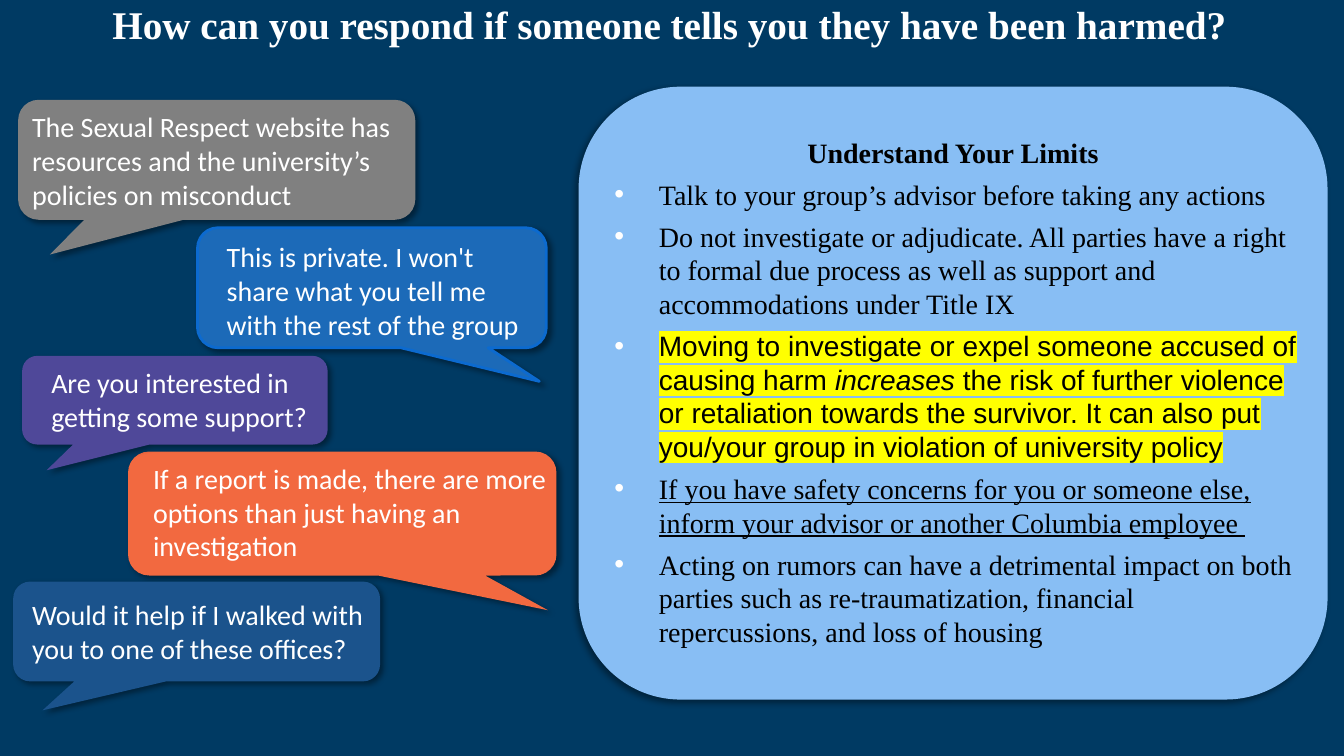
from lxml.etree import SubElement
from pptx import Presentation
from pptx.dml.color import RGBColor
from pptx.enum.shapes import MSO_SHAPE
from pptx.enum.text import MSO_ANCHOR, PP_ALIGN
from pptx.oxml.ns import qn
from pptx.util import Inches, Pt

COLORS = {
    "background": "003A63", "panel": "88BEF4", "white": "FFFFFF",
    "black": "000000", "highlight": "FFFF00", "orange": "F26940",
    "gray": "808080", "blue": "1C6AB8", "blue_edge": "0C6ACF",
    "navy": "1B538C", "purple": "4F4899",
}
SERIF = "Times New Roman"
WIDTH, HEIGHT = Inches(13.333), Inches(7.5)
TAIL_LEFT, TAIL_RIGHT = (-0.42, 0.79, 0.17), (0.48, 0.78, 0.17)

# Bubble box and text box are percentages of the slide: left, top, width, height
BUBBLES = [
    ("orange", TAIL_RIGHT, (9.53, 59.73, 31.88, 16.4), (10.65, 60.4, 31.2, 14.8),
     "If a report is made, there are more options than just having an investigation"),
    ("gray", TAIL_LEFT, (1.35, 13.2, 29.55, 15.87), (1.65, 13.87, 30.68, 14.8),
     "The Sexual Respect website has resources and the university’s policies on misconduct"),
    ("blue", TAIL_RIGHT, (14.7, 30.13, 25.95, 15.87), (16.13, 31.07, 24.45, 15.07),
     "This is private. I won't share what you tell me with the rest of the group"),
    ("navy", TAIL_LEFT, (0.98, 76.93, 27.3, 13.2), (1.65, 78.4, 27.38, 10.27),
     "Would it help if I walked with you to one of these offices?"),
    ("purple", TAIL_LEFT, (1.65, 47.07, 22.73, 11.73), (3.08, 47.73, 21, 10.27),
     "Are you interested in getting some support?"),
]

# Each bullet is a list of runs: text and its formatting
MARKED = {"font": "Arial", "highlight": "highlight"}
LIMITS = [
    [("Talk to your group’s advisor before taking any actions", {})],
    [("Do not investigate or adjudicate. All parties have a right to formal due process "
      "as well as support and accommodations under Title IX", {})],
    [("Moving to investigate or expel someone accused of causing harm ", MARKED),
     ("increases ", {**MARKED, "italic": True}),
     ("the risk of further violence or retaliation towards the survivor. It can also put "
      "you/your group in violation of university policy", MARKED)],
    [("If you have safety concerns for you or someone else, inform your advisor or another "
      "Columbia employee ", {"underline": True})],
    [("Acting on rumors can have a detrimental impact on both parties such as "
      "re-traumatization, financial repercussions, and loss of housing", {})],
]


def rgb(name):
    return RGBColor.from_string(COLORS[name])


def place(box):
    left, top, width, height = box
    return [int(share * length / 100) for share, length in
            ((left, WIDTH), (top, HEIGHT), (width, WIDTH), (height, HEIGHT))]


def add_color(parent, tag, name):
    holder = SubElement(parent, qn(tag))
    return SubElement(holder, qn("a:srgbClr"), val=COLORS[name])


def add_run(paragraph, text, color, font=SERIF, size=20, highlight=None, **styles):
    run = paragraph.add_run()
    run.text = text
    run.font.size = Pt(size)
    run.font.color.rgb = rgb(color)
    if highlight:
        properties = run.font._element
        add_color(properties, "a:highlight", highlight)
    run.font.name = font
    for style, value in styles.items():
        setattr(run.font, style, value)


def add_shadow(shape, degrees):
    shape.shadow.inherit = False
    effects = shape._element.spPr.find(qn("a:effectLst"))
    shadow = SubElement(effects, qn("a:outerShdw"), blurRad=str(Pt(4)), dist=str(Pt(3)),
                        dir=str(degrees * 60000), algn="tl", rotWithShape="0")
    color = SubElement(shadow, qn("a:srgbClr"), val=COLORS["black"])
    SubElement(color, qn("a:alpha"), val="40000")


def add_block(slide, preset, box, fill, shadow_degrees, edge=None):
    shape = slide.shapes.add_shape(preset, *place(box))
    shape.fill.solid()
    shape.fill.fore_color.rgb = rgb(fill)
    if edge:
        shape.line.color.rgb = rgb(edge)
        shape.line.width = Pt(2)
    else:
        shape.line.fill.background()
    add_shadow(shape, shadow_degrees)
    return shape


def add_text(slide, box, text, **styles):
    frame = slide.shapes.add_textbox(*place(box)).text_frame
    frame.word_wrap = True
    add_run(frame.paragraphs[0], text, "white", **styles)
    return frame


def add_title(slide):
    frame = add_text(slide, (4.65, 0.13, 90.68, 8.93),
                     "How can you respond if someone tells you they have been harmed?",
                     size=28, bold=True)
    frame.margin_left = 0
    frame.margin_right = Inches(0.05)
    frame.paragraphs[0].alignment = PP_ALIGN.CENTER
    frame.paragraphs[0].line_spacing = 0.9


def add_bullet(paragraph):
    properties = paragraph._p.get_or_add_pPr()
    properties.set("marL", str(Inches(0.5)))
    properties.set("indent", str(Inches(-0.44)))
    paragraph.space_before = Pt(6)
    add_color(properties, "a:buClr", "white")
    SubElement(properties, qn("a:buFont"), typeface="Arial")
    SubElement(properties, qn("a:buChar"), char="•")


def add_limits_panel(slide):
    panel = add_block(slide, MSO_SHAPE.ROUNDED_RECTANGLE,
                      (43.05, 11.47, 55.73, 81.07), "panel", 135)
    frame = panel.text_frame
    frame.word_wrap = True
    frame.vertical_anchor = MSO_ANCHOR.MIDDLE
    frame.margin_left = frame.margin_top = frame.margin_right = 0
    frame.margin_bottom = Inches(0.03)
    heading = frame.paragraphs[0]
    heading.alignment = PP_ALIGN.CENTER
    add_run(heading, "Understand Your Limits", "black", bold=True)
    for runs in LIMITS:
        paragraph = frame.add_paragraph()
        paragraph.alignment = PP_ALIGN.LEFT
        add_bullet(paragraph)
        for text, styles in runs:
            add_run(paragraph, text, "black", **styles)


def add_bubble(slide, color, tail, box, text_box, text):
    edge = "blue_edge" if color == "blue" else None
    bubble = add_block(slide, MSO_SHAPE.ROUNDED_RECTANGULAR_CALLOUT, box, color, 45, edge)
    for index, value in enumerate(tail):
        bubble.adjustments[index] = value
    add_text(slide, text_box, text, font="Calibri")


def main():
    presentation = Presentation()
    presentation.slide_width, presentation.slide_height = WIDTH, HEIGHT
    slide = presentation.slides.add_slide(presentation.slide_layouts[6])
    slide.background.fill.solid()
    slide.background.fill.fore_color.rgb = rgb("background")
    add_title(slide)
    add_limits_panel(slide)
    for bubble in BUBBLES:
        add_bubble(slide, *bubble)
    presentation.save("out.pptx")


if __name__ == "__main__":
    main()
